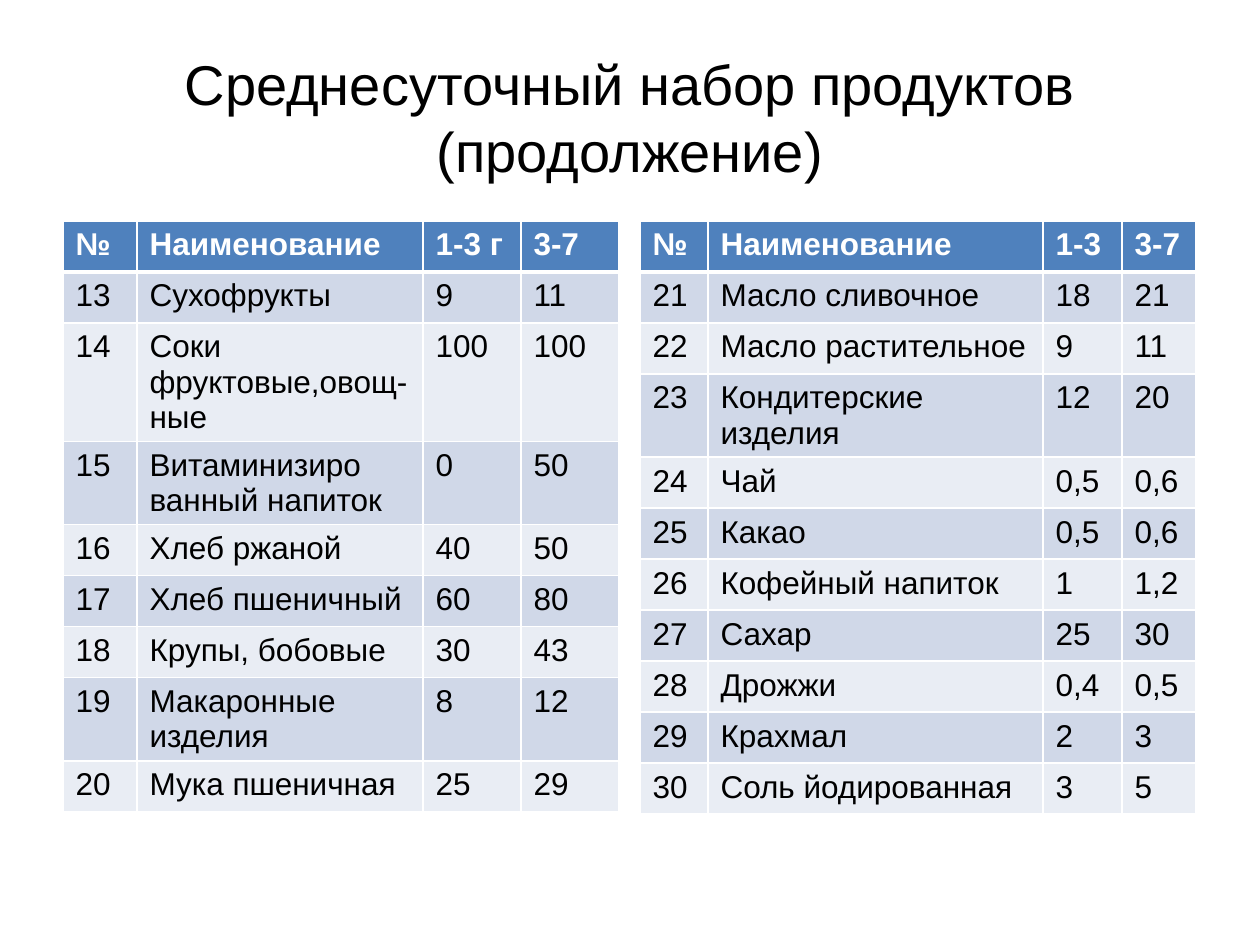
import pptx
import pptx.dml.color
import pptx.enum.text
import pptx.oxml
import pptx.oxml.ns
import pptx.util

PX = 914400 / 126
FONT = "Arial"
ROW_HEIGHT = 51
COLORS = {
    "text": "000000",
    "header": "4F81BD",
    "header_text": "FFFFFF",
    "odd_row": "D0D8E8",
    "even_row": "E9EDF4",
    "border": "FFFFFF",
}

TITLE = "Среднесуточный набор продуктов (продолжение)"
LEFT_PRODUCTS = [
    ("№", "Наименование", "1-3 г", "3-7"),
    ("13", "Сухофрукты", "9", "11"),
    ("14", "Соки фруктовые,овощ-ные", "100", "100"),
    ("15", "Витаминизиро\nванный напиток", "0", "50"),
    ("16", "Хлеб ржаной", "40", "50"),
    ("17", "Хлеб пшеничный", "60", "80"),
    ("18", "Крупы, бобовые", "30", "43"),
    ("19", "Макаронные изделия", "8", "12"),
    ("20", "Мука пшеничная", "25", "29"),
]
RIGHT_PRODUCTS = [
    ("№", "Наименование", "1-3", "3-7"),
    ("21", "Масло сливочное", "18", "21"),
    ("22", "Масло растительное", "9", "11"),
    ("23", "Кондитерские изделия", "12", "20"),
    ("24", "Чай", "0,5", "0,6"),
    ("25", "Какао", "0,5", "0,6"),
    ("26", "Кофейный напиток", "1", "1,2"),
    ("27", "Сахар", "25", "30"),
    ("28", "Дрожжи", "0,4", "0,5"),
    ("29", "Крахмал", "2", "3"),
    ("30", "Соль йодированная", "3", "5"),
]


def px(length):
    return pptx.util.Emu(round(length * PX))


def rgb(name):
    return pptx.dml.color.RGBColor.from_string(COLORS[name])


def set_font(paragraph, size, color, bold=False):
    paragraph.font.name = FONT
    paragraph.font.size = pptx.util.Pt(size)
    paragraph.font.bold = bold
    paragraph.font.color.rgb = rgb(color)


def add_borders(cell, row):
    """Draw thin borders, with a thick rule between the header and the body."""
    widths = {"L": 1, "R": 1, "T": 3 if row == 1 else 1, "B": 3 if row == 0 else 1}
    properties = cell._tc.get_or_add_tcPr()
    for side, width in widths.items():
        properties.append(pptx.oxml.parse_xml(
            f'<a:ln{side} {pptx.oxml.ns.nsdecls("a")} w="{pptx.util.Pt(width)}">'
            f'<a:solidFill><a:srgbClr val="{COLORS["border"]}"/></a:solidFill>'
            f'</a:ln{side}>'))


def place_title(slide, left, top, width, height):
    title = slide.shapes.title
    title.left, title.top = px(left), px(top)
    title.width, title.height = px(width), px(height)
    frame = title.text_frame
    frame.text = TITLE
    frame.word_wrap = True
    frame.vertical_anchor = pptx.enum.text.MSO_ANCHOR.MIDDLE
    heading = frame.paragraphs[0]
    heading.alignment = pptx.enum.text.PP_ALIGN.CENTER
    set_font(heading, 32, "text")


def add_product_table(slide, left, top, column_widths, products):
    table = slide.shapes.add_table(
        len(products), len(column_widths), px(left), px(top),
        px(sum(column_widths)), px(ROW_HEIGHT * len(products))).table
    for column, width in zip(table.columns, column_widths):
        column.width = px(width)
    for row, product in enumerate(products):
        is_header = row == 0
        band = "header" if is_header else "odd_row" if row % 2 else "even_row"
        for column, value in enumerate(product):
            cell = table.cell(row, column)
            add_borders(cell, row)
            cell.fill.solid()
            cell.fill.fore_color.rgb = rgb(band)
            cell.text = value
            for paragraph in cell.text_frame.paragraphs:
                set_font(paragraph, 18, "header_text" if is_header else "text", is_header)


def main():
    presentation = pptx.Presentation()
    presentation.slide_width, presentation.slide_height = px(1260), px(945)
    slide = presentation.slides.add_slide(presentation.slide_layouts[5])
    place_title(slide, 63, 38, 1134, 157)
    add_product_table(slide, 63, 221, (74, 286, 98, 98), LEFT_PRODUCTS)
    add_product_table(slide, 640, 221, (68, 335, 79, 74), RIGHT_PRODUCTS)
    presentation.save("out.pptx")


if __name__ == "__main__":
    main()
